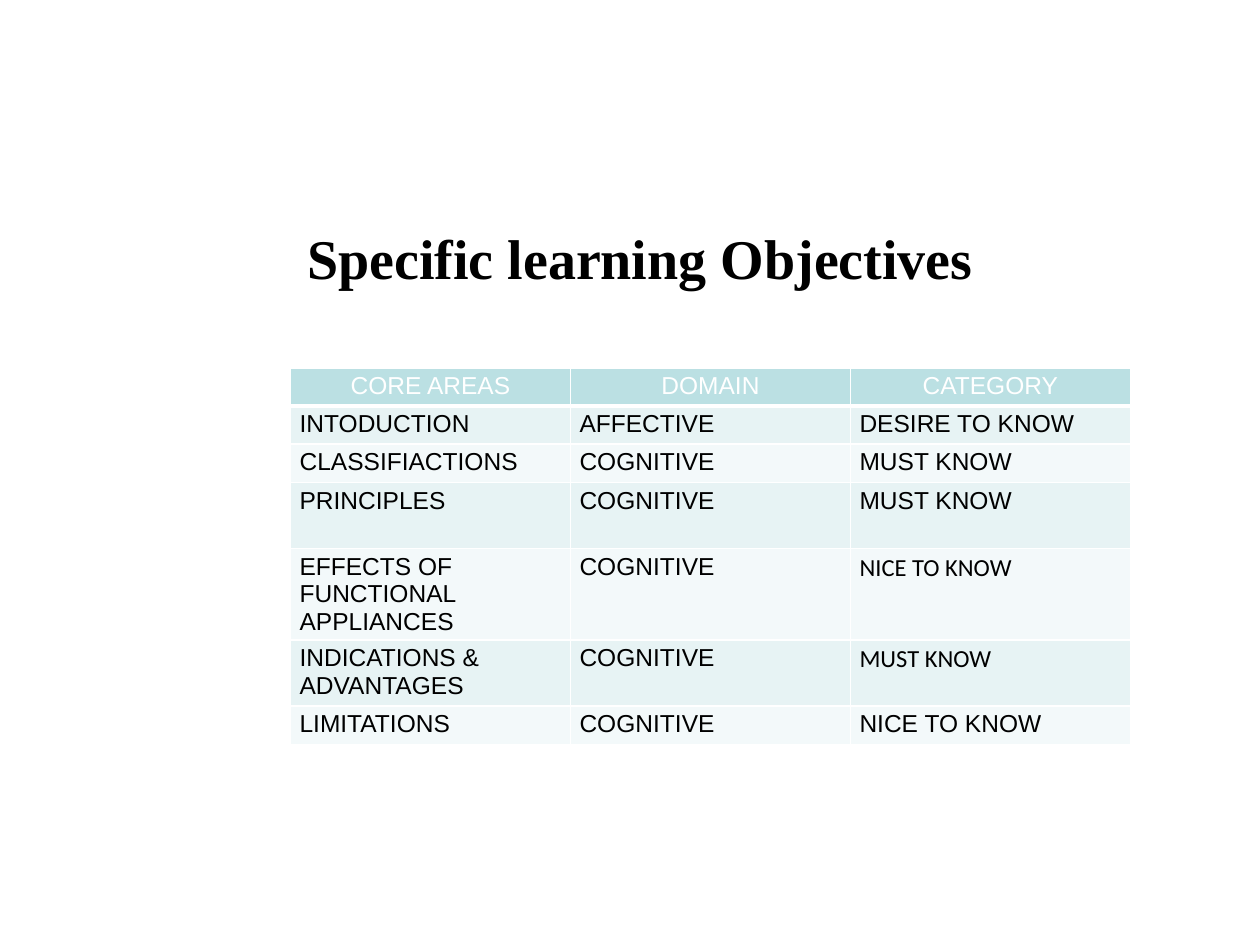
from typing import NamedTuple

from lxml import etree
from pptx import Presentation
from pptx.dml.color import RGBColor
from pptx.enum.text import MSO_ANCHOR, PP_ALIGN
from pptx.oxml.ns import qn
from pptx.util import Pt

LEFT, CENTER = PP_ALIGN.LEFT, PP_ALIGN.CENTER
MIDDLE = MSO_ANCHOR.MIDDLE
TITLE_ONLY = 5

COLORS = {
    "text": "000000",
    "white": "FFFFFF",
    "header": "BBE0E3",
    "odd": "E7F3F4",
    "even": "F3F9FA",
}
COLUMN_WIDTH = 160
SHORT, TALL = 21.8, 37.8


class Objective(NamedTuple):
    area: str
    domain: str
    category: str
    height: float = SHORT
    category_font: str = "Arial"


HEADER = Objective("CORE AREAS", "DOMAIN", "CATEGORY")
OBJECTIVES = [
    Objective("INTODUCTION", "AFFECTIVE", "DESIRE TO KNOW"),
    Objective("CLASSIFIACTIONS", "COGNITIVE", "MUST KNOW"),
    Objective("PRINCIPLES", "COGNITIVE", "MUST KNOW", TALL),
    Objective("EFFECTS OF FUNCTIONAL APPLIANCES", "COGNITIVE", "NICE TO KNOW",
              TALL, "Calibri"),
    Objective("INDICATIONS & ADVANTAGES", "COGNITIVE", "MUST KNOW",
              TALL, "Calibri"),
    Objective("LIMITATIONS", "COGNITIVE", "NICE TO KNOW"),
]


def rgb(name: str) -> RGBColor:
    return RGBColor.from_string(COLORS[name])


def write(tf, text: str, *, size: float = 14, font: str = "Arial",
          color: str = "text", bold: bool = False, align=LEFT) -> None:
    p = tf.paragraphs[0]
    p.alignment = align
    r = p.add_run()
    r.text = text
    r.font.size = Pt(size)
    r.font.name = font
    r.font.bold = bold
    r.font.color.rgb = rgb(color)


def set_borders(cell, bottom: float = 1) -> None:
    """Draw white cell borders, placed ahead of the fill as the schema asks."""
    tc_pr = cell._tc.get_or_add_tcPr()
    widths = {"a:lnL": 1, "a:lnR": 1, "a:lnT": 1, "a:lnB": bottom}
    for i, (tag, width) in enumerate(widths.items()):
        ln = etree.Element(qn(tag), w=str(Pt(width)))
        fill = etree.SubElement(ln, qn("a:solidFill"))
        etree.SubElement(fill, qn("a:srgbClr"), val=COLORS["white"])
        tc_pr.insert(i, ln)


def add_title(s, text: str) -> None:
    sp = s.shapes.title
    sp.left, sp.top, sp.width, sp.height = Pt(96.5), Pt(114.5), Pt(547), Pt(65)
    tf = sp.text_frame
    tf.vertical_anchor = MIDDLE
    write(tf, text, size=32, font="Times New Roman", bold=True, align=CENTER)


def fill_row(table, index: int, row: Objective) -> None:
    is_header = index == 0
    fill = "header" if is_header else "odd" if index % 2 else "even"
    table.rows[index].height = Pt(row.height)
    fonts = ("Arial", "Arial", row.category_font)
    texts = (row.area, row.domain, row.category)
    for cell, text, font in zip(table.rows[index].cells, texts, fonts):
        cell.margin_left = cell.margin_right = Pt(5.2)
        cell.margin_top = cell.margin_bottom = Pt(2.6)
        cell.fill.solid()
        cell.fill.fore_color.rgb = rgb(fill)
        set_borders(cell, bottom=3 if is_header else 1)
        write(cell.text_frame, text, font=font,
              color="white" if is_header else "text",
              align=CENTER if is_header else LEFT)


def add_objectives(s) -> None:
    rows = [HEADER, *OBJECTIVES]
    height = sum(row.height for row in rows)
    table = s.shapes.add_table(len(rows), 3, Pt(166), Pt(210.2),
                               Pt(3 * COLUMN_WIDTH), Pt(height)).table
    for column in table.columns:
        column.width = Pt(COLUMN_WIDTH)
    for index, row in enumerate(rows):
        fill_row(table, index, row)


def main() -> None:
    prs = Presentation()
    prs.slide_width, prs.slide_height = Pt(720), Pt(540)
    s = prs.slides.add_slide(prs.slide_layouts[TITLE_ONLY])
    add_title(s, "Specific learning Objectives ")
    add_objectives(s)
    prs.save("out.pptx")


if __name__ == "__main__":
    main()
